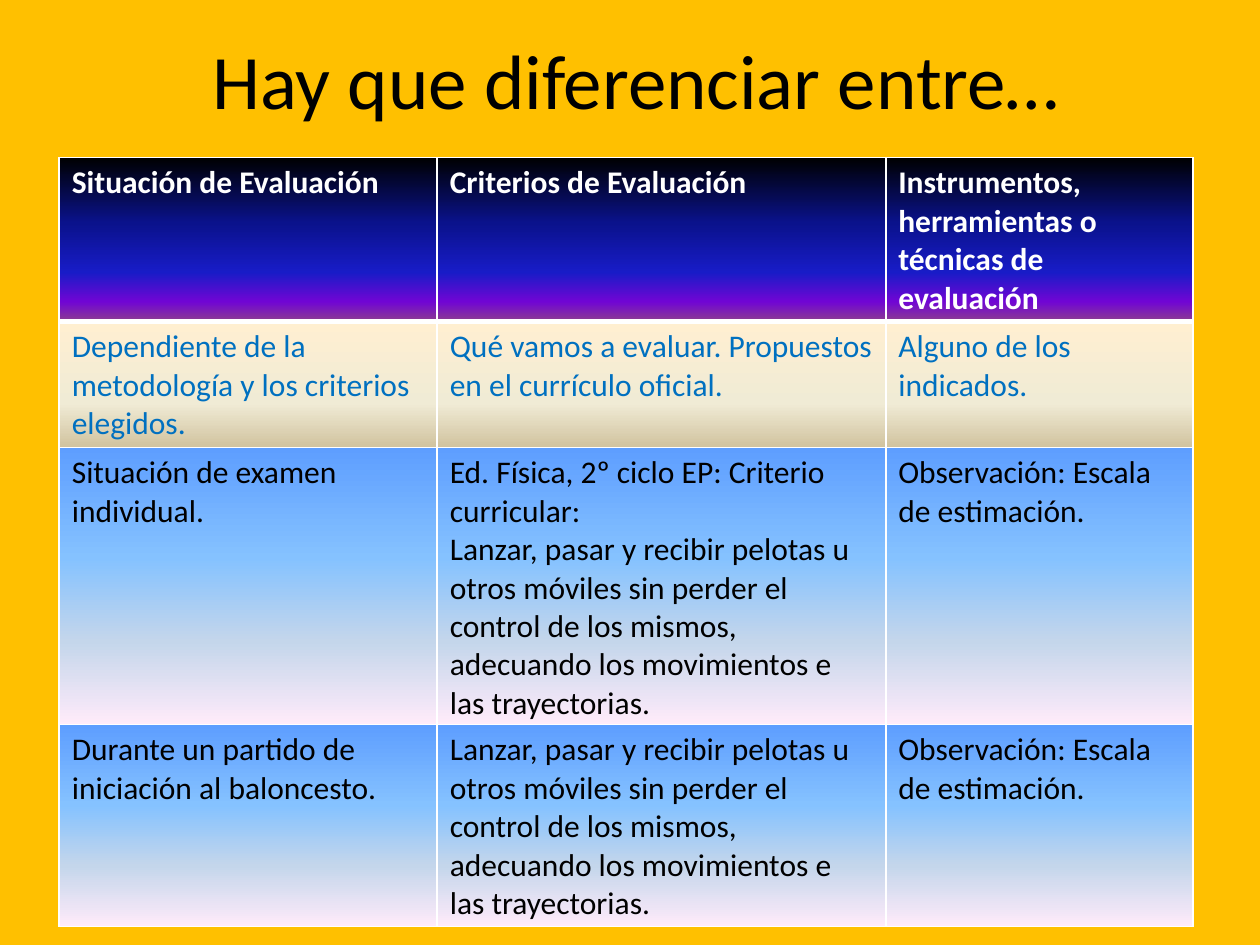
from dataclasses import dataclass

from lxml.etree import SubElement as Sub
from pptx import Presentation
from pptx.dml.color import RGBColor
from pptx.enum.text import MSO_ANCHOR as Anchor, PP_ALIGN as Align
from pptx.oxml.ns import qn
from pptx.util import Pt

WHITE = "FFFFFF"
BLACK = "000000"
NIGHT = ((0, "000000"), (40, "0A128C"), (70, "181CC7"), (88, "7005D4"), (100, "8C3D91"))
SAND = ((0, "FFEFD1"), (65, "F0EBD5"), (100, "D1C39F"))
SKY = ((0, "5E9EFF"), (40, "85C2FF"), (70, "C4D6EB"), (100, "FFEBFA"))
THROW = ("Lanzar, pasar y recibir pelotas u otros móviles sin perder el control "
         "de los mismos, adecuando los movimientos e las trayectorias.")
WATCH = "Observación: Escala de estimación."


@dataclass(frozen=True)
class Row:
    texts: tuple[str, ...]
    stops: tuple[tuple[int, str], ...]
    ink: str = BLACK
    bold: bool = False
    top: float = 1
    base: float = 1


ROWS = (
    Row(("Situación de Evaluación", "Criterios de Evaluación",
         "Instrumentos, herramientas o técnicas de evaluación"),
        NIGHT, WHITE, bold=True, base=3),
    Row(("Dependiente de la metodología y los criterios elegidos.",
         "Qué vamos a evaluar. Propuestos en el currículo oficial.",
         "Alguno de los indicados."), SAND, "0070C0", top=3),
    Row(("Situación de examen individual.",
         "Ed. Física, 2º ciclo EP: Criterio curricular:\n" + THROW, WATCH), SKY),
    Row(("Durante un partido de iniciación al baloncesto.", THROW, WATCH), SKY),
)
WIDTHS = (216, 256.32, 175.68)
HEIGHT = 29.2


def color(code: str) -> RGBColor:
    return RGBColor.from_string(code)


def write(frame, text: str, size: float, ink: str, bold: bool = False,
          align: Align = Align.LEFT) -> None:
    frame.text = text
    style = {"name": "Calibri", "size": Pt(size), "bold": bold}
    for para in frame.paragraphs:
        para.alignment = align
        for run in para.runs:
            for key, value in style.items():
                setattr(run.font, key, value)
            run.font.color.rgb = color(ink)


def paint(cell, row: Row) -> None:
    """Give a cell its white borders, then its downward gradient."""
    props = cell._tc.get_or_add_tcPr()
    for side, width in {"L": 1, "R": 1, "T": row.top, "B": row.base}.items():
        line = Sub(props, qn(f"a:ln{side}"), w=str(Pt(width)))
        Sub(Sub(line, qn("a:solidFill")), qn("a:srgbClr"), val=WHITE)
    grad = Sub(props, qn("a:gradFill"), rotWithShape="1")
    stops = Sub(grad, qn("a:gsLst"))
    for place, code in row.stops:
        stop = Sub(stops, qn("a:gs"), pos=str(place * 1000))
        Sub(stop, qn("a:srgbClr"), val=code)
    Sub(grad, qn("a:lin"), ang="5400000", scaled="0")


def add_title(slide) -> None:
    box = slide.shapes.add_textbox(Pt(39.6), Pt(0), Pt(648), Pt(90))
    frame = box.text_frame
    for key, value in {"word_wrap": True, "vertical_anchor": Anchor.MIDDLE}.items():
        setattr(frame, key, value)
    write(frame, "Hay que diferenciar entre…", 44, BLACK, align=Align.CENTER)


def add_grid(slide) -> None:
    shape = slide.shapes.add_table(len(ROWS), len(WIDTHS), Pt(33.84), Pt(90),
                                   Pt(sum(WIDTHS)), Pt(HEIGHT * len(ROWS)))
    table = shape.table
    for key in ("first_row", "horz_banding"):
        setattr(table, key, False)
    for col, width in zip(table.columns, WIDTHS):
        col.width = Pt(width)
    for line, row in zip(table.rows, ROWS):
        line.height = Pt(HEIGHT)
        for cell, text in zip(line.cells, row.texts):
            write(cell.text_frame, text, 18, row.ink, row.bold)
            paint(cell, row)
    shape.height = Pt(439.2)


def main() -> None:
    deck = Presentation()
    deck.slide_width, deck.slide_height = Pt(720), Pt(540)
    slide = deck.slides.add_slide(deck.slide_layouts[6])
    back = slide.background.fill
    back.solid()
    back.fore_color.rgb = color("FFC000")
    add_title(slide)
    add_grid(slide)
    deck.save("out.pptx")


if __name__ == "__main__":
    main()
